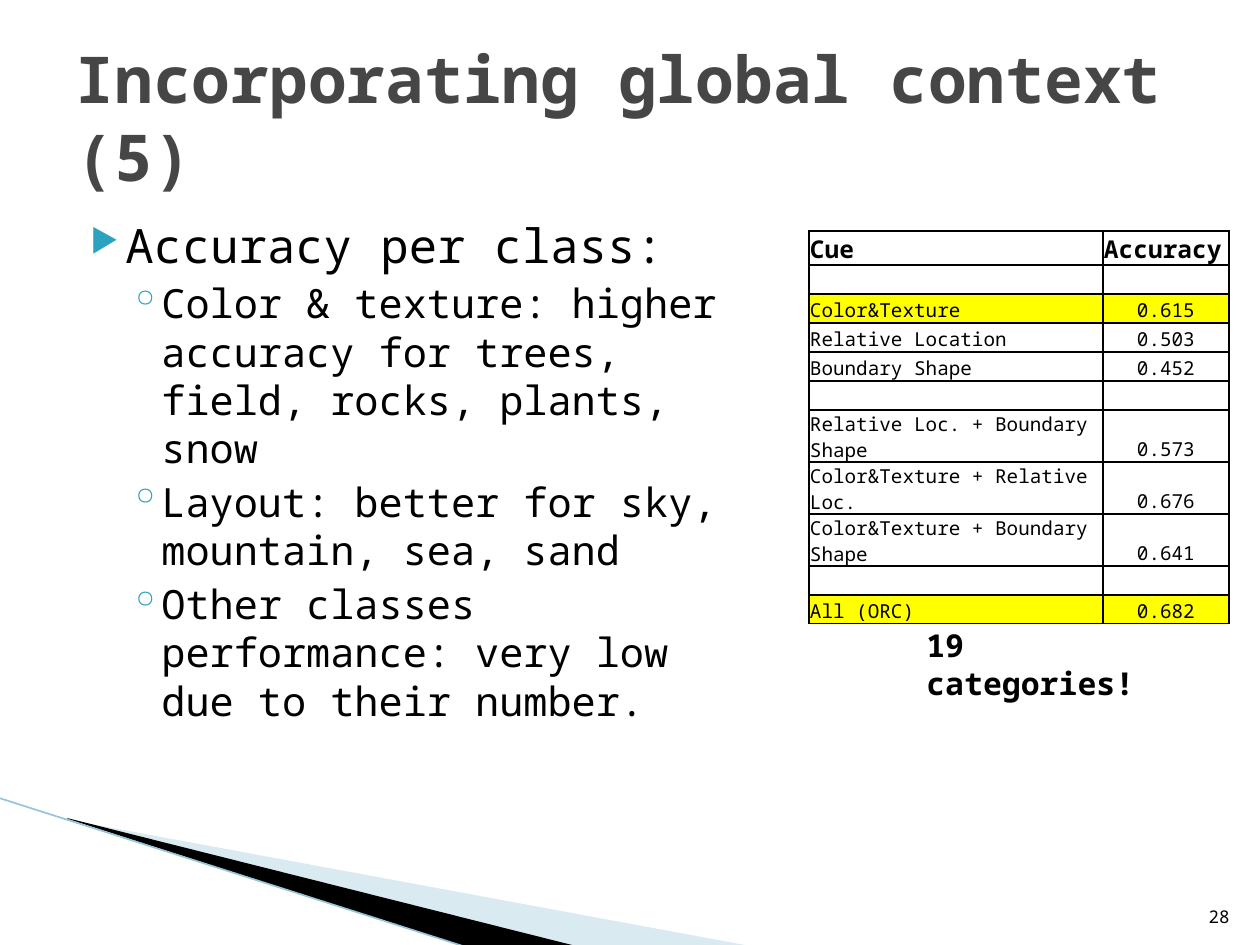
from lxml import etree
from pptx import Presentation
from pptx.dml.color import RGBColor
from pptx.enum.shapes import MSO_CONNECTOR
from pptx.enum.text import MSO_ANCHOR, MSO_AUTO_SIZE, PP_ALIGN
from pptx.oxml import parse_xml
from pptx.oxml.ns import qn
from pptx.util import Pt

LEFT, CENTER, RIGHT = PP_ALIGN.LEFT, PP_ALIGN.CENTER, PP_ALIGN.RIGHT
MIDDLE, BOTTOM = MSO_ANCHOR.MIDDLE, MSO_ANCHOR.BOTTOM
NS = 'xmlns:a="http://schemas.openxmlformats.org/drawingml/2006/main"'
PX = 914400 / 126


def px(*lengths):
    """Turn pixel lengths into EMU."""
    return [round(n * PX) for n in lengths]


def write(p, text, size, color="000000", bold=False, align=LEFT):
    p.alignment = align
    r = p.add_run()
    r.text = text
    r.font.name = "Noto Sans Mono"
    r.font.size = Pt(size)
    r.font.bold = bold
    r.font.color.rgb = RGBColor.from_string(color)


prs = Presentation()
prs.slide_width, prs.slide_height = px(1260, 945)
s = prs.slides.add_slide(prs.slide_layouts[5])

# Corner decoration
wedges = [
    ("A0CBDC", 40, [(69, 820), (750, 946), (575, 946), (69, 819)]),
    ("000000", 100, [(67, 818), (576, 946), (469, 948), (68, 819)]),
]
for color, opacity, points in wedges:
    builder = s.shapes.build_freeform(*points[0], scale=PX)
    builder.add_line_segments(points[1:], close=True)
    sp = builder.convert_to_shape()
    sp.shadow.inherit = False
    sp.line.fill.background()
    sp.fill.solid()
    sp.fill.fore_color.rgb = RGBColor.from_string(color)
    if opacity < 100:
        clr = sp._element.spPr.find(".//" + qn("a:srgbClr"))
        etree.SubElement(clr, qn("a:alpha"), val=str(opacity * 1000))

edge = s.shapes.add_connector(MSO_CONNECTOR.STRAIGHT, *px(-1, 798, 469, 948))
edge.line.color.rgb = RGBColor.from_string("97C5D8")
edge.line.width = Pt(0.95)
etree.SubElement(edge._element.spPr, qn("a:effectLst"))

# Title
title = s.shapes.title
title.left, title.top, title.width, title.height = px(63, 38, 1134, 157)
tf = title.text_frame
tf.auto_size = MSO_AUTO_SIZE.NONE
tf.word_wrap = True
tf.vertical_anchor = MIDDLE
write(tf.paragraphs[0], "Incorporating global context (5)", 36.9, "464646", True)

# Bulleted text
tf = s.shapes.add_textbox(*px(63, 210, 693, 536)).text_frame
tf.word_wrap = True
bullets = [
    (0, "Accuracy per class:"),
    (1, "Color & texture: higher accuracy for trees, field, rocks, plants, snow"),
    (1, "Layout: better for sky, mountain, sea, sand"),
    (1, "Other classes performance: very low due to their number."),
]
# Per level: bullet, bullet size in percent, left margin, indent, text size
levels = [("▶", 68, 50, -35, 27), ("◦", 100, 86, -32, 23)]
for i, (level, text) in enumerate(bullets):
    char, percent, margin, indent, size = levels[level]
    p = tf.add_paragraph() if i else tf.paragraphs[0]
    p.level = level
    pPr = p._p.get_or_add_pPr()
    margin, indent = px(margin, indent)
    pPr.set("marL", str(margin))
    pPr.set("indent", str(indent))
    for xml in (
        f'<a:buClr {NS}><a:srgbClr val="2DA2BF"/></a:buClr>',
        f'<a:buSzPct {NS} val="{percent * 1000}"/>',
        f'<a:buChar {NS} char="{char}"/>',
    ):
        pPr.append(parse_xml(xml))
    if i:
        p.space_before = Pt(3.2)
    write(p, text, size)

# Accuracy table
rows = [
    ("Cue", "Accuracy"),
    ("", ""),
    ("Color&Texture", "0.615"),
    ("Relative Location", "0.503"),
    ("Boundary Shape", "0.452"),
    ("", ""),
    ("Relative Loc. + Boundary Shape", "0.573"),
    ("Color&Texture + Relative Loc.", "0.676"),
    ("Color&Texture + Boundary Shape", "0.641"),
    ("", ""),
    ("All (ORC)", "0.682"),
]
highlighted = ("Color&Texture", "All (ORC)")
heights = [34] + [29] * 5 + [52] * 3 + [29] * 2
table = s.shapes.add_table(len(rows), 2, *px(809, 231, 420, sum(heights))).table
for column, width in zip(table.columns, px(294, 126)):
    column.width = width
for i, (row, height) in enumerate(zip(rows, px(*heights))):
    table.rows[i].height = height
    for j, text in enumerate(row):
        cell = table.cell(i, j)
        cell.margin_left, cell.margin_right, cell.margin_top, cell.margin_bottom = px(1, 1, 1, 0)
        cell.vertical_anchor = BOTTOM
        tcPr = cell._tc.get_or_add_tcPr()
        for side in "LRTB":
            tcPr.append(parse_xml(
                f'<a:ln{side} {NS} w="12700"><a:solidFill>'
                f'<a:srgbClr val="000000"/></a:solidFill></a:ln{side}>'))
        if row[0] in highlighted:
            cell.fill.solid()
            cell.fill.fore_color.rgb = RGBColor.from_string("FFFF00")
        else:
            cell.fill.background()
        p = cell.text_frame.paragraphs[0]
        if not text:
            etree.SubElement(p._p, qn("a:endParaRPr"), sz="1100")
        elif i == 0:
            write(p, text, 14, bold=True)
        else:
            write(p, text, 11, align=CENTER if j else LEFT)

# Table note and slide number
tf = s.shapes.add_textbox(*px(914, 620, 249, 50)).text_frame
tf.word_wrap = True
write(tf.paragraphs[0], "19 categories!", 18, bold=True)

tf = s.shapes.add_textbox(*px(1192, 883, 50, 50)).text_frame
tf.word_wrap = True
tf.vertical_anchor = BOTTOM
write(tf.paragraphs[0], "28", 10, align=RIGHT)

prs.save("out.pptx")
